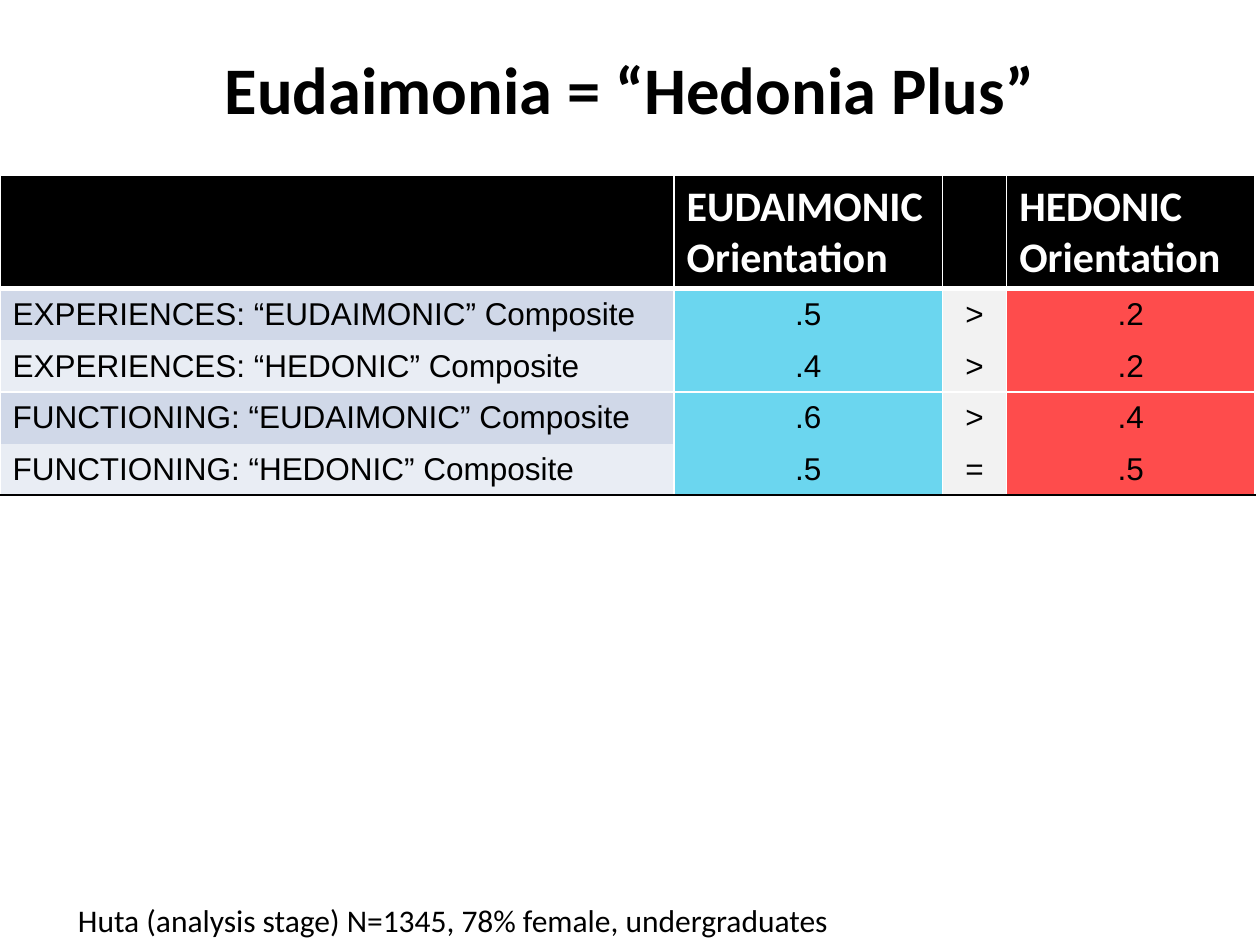
import dataclasses

import lxml.etree
import pptx
import pptx.dml.color
import pptx.enum.text
import pptx.oxml.ns
import pptx.util

Inches = pptx.util.Inches
Pt = pptx.util.Pt
Align = pptx.enum.text.PP_ALIGN
Anchor = pptx.enum.text.MSO_ANCHOR

COLORS = {
    "black": "000000",
    "white": "FFFFFF",
    "band_dark": "D0D8E8",
    "band_light": "E9EDF4",
    "eudaimonic": "6BD6EF",
    "comparison": "F2F2F2",
    "hedonic": "FE4C4C",
}


@dataclasses.dataclass(frozen=True)
class TextStyle:
    font: str
    size: float
    color: str
    bold: bool = False
    align: Align = Align.LEFT


@dataclasses.dataclass(frozen=True)
class Rule:
    color: str
    width: float


@dataclasses.dataclass(frozen=True)
class Composite:
    measure: str
    eudaimonic: str
    comparison: str
    hedonic: str


TITLE = TextStyle("Calibri", 38, "black", True, Align.CENTER)
HEADER = TextStyle("Calibri", 24, "white", True)
MEASURE = TextStyle("Arial", 18, "black")
VALUE = TextStyle("Arial", 18, "black", align=Align.CENTER)
SOURCE = TextStyle("Calibri", 18, "black")

THIN = Rule("white", 1)
ROW_RULES = [THIN, Rule("white", 3), None, THIN, None, Rule("black", 1)]

HEADINGS = Composite("", "EUDAIMONIC Orientation", "", "HEDONIC Orientation")
COMPOSITES = [
    Composite("EXPERIENCES: “EUDAIMONIC” Composite", ".5", ">", ".2"),
    Composite("EXPERIENCES: “HEDONIC” Composite", ".4", ">", ".2"),
    Composite("FUNCTIONING: “EUDAIMONIC” Composite", ".6", ">", ".4"),
    Composite("FUNCTIONING: “HEDONIC” Composite", ".5", "=", ".5"),
]
COLUMN_WIDTHS = [5.35, 2.13, 0.51, 1.97]
ROW_HEIGHTS = [0.89] + [0.41] * len(COMPOSITES)


def rgb(name: str) -> pptx.dml.color.RGBColor:
    return pptx.dml.color.RGBColor.from_string(COLORS[name])


def write(frame, text: str, style: TextStyle) -> None:
    paragraph = frame.paragraphs[0]
    paragraph.alignment = style.align
    run = paragraph.add_run()
    run.text = text
    run.font.name = style.font
    run.font.size = Pt(style.size)
    run.font.bold = style.bold
    run.font.color.rgb = rgb(style.color)


def set_borders(cell, top: Rule | None, bottom: Rule | None) -> None:
    qn = pptx.oxml.ns.qn
    properties = cell._tc.get_or_add_tcPr()
    edges = {"a:lnL": THIN, "a:lnR": THIN, "a:lnT": top, "a:lnB": bottom}
    for position, (tag, rule) in enumerate(edges.items()):
        line = lxml.etree.Element(qn(tag))
        properties.insert(position, line)
        if rule is None:
            lxml.etree.SubElement(line, qn("a:noFill"))
            continue
        line.set("w", str(Pt(rule.width)))
        fill = lxml.etree.SubElement(line, qn("a:solidFill"))
        lxml.etree.SubElement(fill, qn("a:srgbClr"), val=COLORS[rule.color])


def fill_row(table, row: int, composite: Composite, styles: list[TextStyle], fills: list[str]) -> None:
    for column, text in enumerate(dataclasses.astuple(composite)):
        cell = table.cell(row, column)
        cell.vertical_anchor = Anchor.MIDDLE
        cell.fill.solid()
        cell.fill.fore_color.rgb = rgb(fills[column])
        set_borders(cell, ROW_RULES[row], ROW_RULES[row + 1])
        if text:
            write(cell.text_frame, text, styles[column])


def add_correlations(slide) -> None:
    table = slide.shapes.add_table(
        len(ROW_HEIGHTS), len(COLUMN_WIDTHS), Inches(0), Inches(1.39),
        Inches(sum(COLUMN_WIDTHS)), Inches(sum(ROW_HEIGHTS)),
    ).table
    for column, width in zip(table.columns, COLUMN_WIDTHS):
        column.width = Inches(width)
    for row, height in zip(table.rows, ROW_HEIGHTS):
        row.height = Inches(height)

    fill_row(table, 0, HEADINGS, [HEADER] * 4, ["black"] * 4)
    for row, composite in enumerate(COMPOSITES, start=1):
        band = "band_dark" if row % 2 else "band_light"
        fills = [band, "eudaimonic", "comparison", "hedonic"]
        fill_row(table, row, composite, [MEASURE] + [VALUE] * 3, fills)


def main() -> None:
    deck = pptx.Presentation()
    deck.slide_width = Inches(10)
    deck.slide_height = Inches(7.5)
    slide = deck.slides.add_slide(deck.slide_layouts[5])

    source = slide.shapes.add_textbox(Inches(0.52), Inches(7.1), Inches(9.48), Inches(0.4))
    source.text_frame.word_wrap = True
    source.text_frame.auto_size = pptx.enum.text.MSO_AUTO_SIZE.SHAPE_TO_FIT_TEXT
    write(source.text_frame, "Huta (analysis stage) N=1345, 78% female, undergraduates", SOURCE)

    title = slide.shapes.title
    title.left, title.top, title.width, title.height = Inches(0), Inches(0), Inches(10), Inches(1.39)
    title.text_frame.vertical_anchor = Anchor.MIDDLE
    write(title.text_frame, "Eudaimonia = “Hedonia Plus”", TITLE)

    add_correlations(slide)
    deck.save("out.pptx")


if __name__ == "__main__":
    main()
